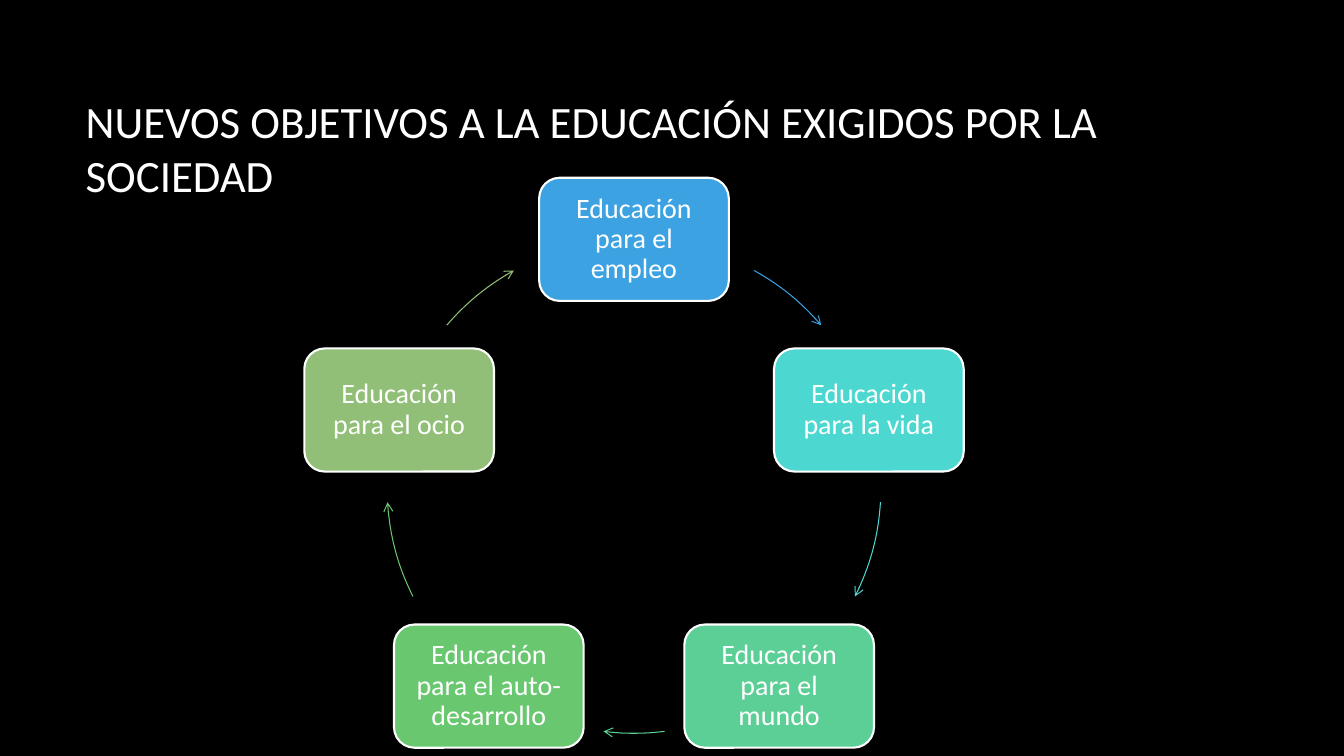
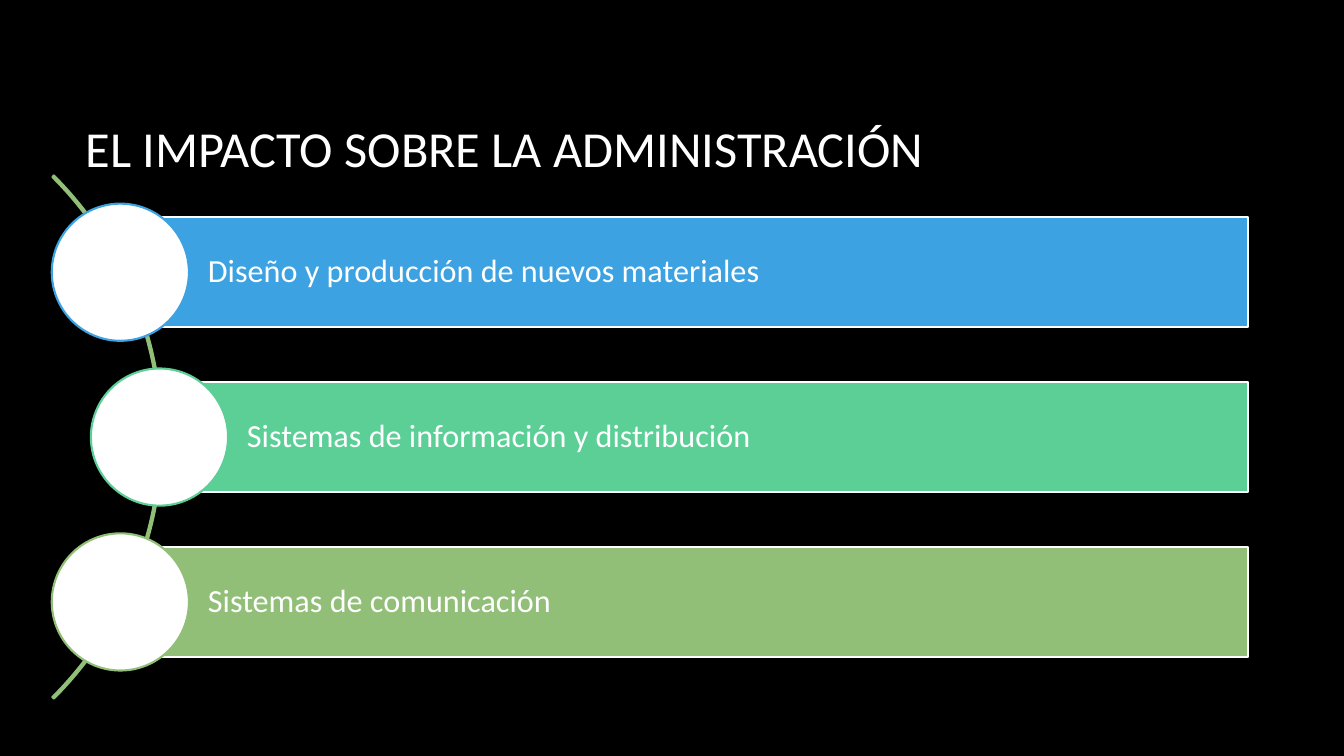
from math import cos, radians, sin, sqrt

from lxml.etree import SubElement
from pptx import Presentation
from pptx.dml.color import RGBColor as Rgb
from pptx.enum.shapes import MSO_SHAPE as Kind
from pptx.enum.text import MSO_ANCHOR as Anchor, MSO_AUTO_SIZE as Auto, PP_ALIGN as Align
from pptx.oxml.ns import qn
from pptx.util import Pt

HUES = {
    "black": "000000",
    "white": "FFFFFF",
    "blue": "3CA2E2",
    "cyan": "4CD8D1",
    "mint": "5BCF96",
    "green": "69C770",
    "olive": "91BF77",
}
FONT = "Calibri"


def hue(name):
    return Rgb.from_string(HUES[name])


def write(shape, text, size=20, align=Align.LEFT, pads=(7.2, 3.6, 7.2, 3.6), space=1.0):
    frame = shape.text_frame
    frame.word_wrap = True
    frame.auto_size = Auto.NONE
    frame.vertical_anchor = Anchor.MIDDLE
    frame.margin_left, frame.margin_top, frame.margin_right, frame.margin_bottom = map(Pt, pads)
    frame.text = text
    para = frame.paragraphs[0]
    para.alignment = align
    para.line_spacing = space
    para.font.name = FONT
    para.font.size = Pt(size)
    para.font.color.rgb = hue("white")


def block(slide, kind, box, fill, line, width=1.5):
    shape = slide.shapes.add_shape(kind, *map(Pt, box))
    shape.shadow.inherit = False
    if fill:
        shape.fill.solid()
        shape.fill.fore_color.rgb = hue(fill)
    else:
        shape.fill.background()
    shape.line.color.rgb = hue(line)
    shape.line.width = Pt(width)
    return shape


def ring(slide, kind, hub, radius, turns, color, width):
    box = hub[0] - radius, hub[1] - radius, radius * 2, radius * 2
    curve = block(slide, kind, box, None, color, width)
    for i, turn in enumerate(turns):
        curve.adjustments[i] = (turn - 90) % 360 * 0.6
    return curve


def start_slide(deck, title, size):
    slide = deck.slides.add_slide(deck.slide_layouts[5])
    head = slide.shapes.title
    head.left, head.top, head.width, head.height = map(Pt, (54, 48, 798, 114.5))
    write(head, title, size=size)
    return slide


def cycle(slide, box, items):
    left, top, side = box
    radius = side / 2
    hub = left + radius, top + radius
    wide, high = 135.5, 88
    spans = [(29.1, 49.3), (93.7, 116.5), (172.9, 187.1), (243.5, 266.3), (310.7, 330.9)]
    for i, ((text, color), span) in enumerate(zip(items, spans)):
        turn = radians(360 / len(items) * i)
        x, y = hub[0] + radius * sin(turn), hub[1] - radius * cos(turn)
        place = x - wide / 2, y - high / 2, wide, high
        node = block(slide, Kind.ROUNDED_RECTANGLE, place, color, "white")
        write(node, text, align=Align.CENTER, pads=(5.8,) * 4, space=0.9)
        curve = ring(slide, Kind.ARC, hub, radius, span, color, 0.75)
        SubElement(curve.line._get_or_add_ln(), qn("a:tailEnd"), type="arrow")


def curved_list(slide, box, items):
    left, top, wide, high = box
    mid = top + high / 2
    hub = left - 186.3, mid
    pitch, bar, disc, reach = 117.75, 78.5, 98, 262.2
    curve = ring(slide, Kind.BLOCK_ARC, hub, 264.2, (45, 135), "olive", 1.5)
    curve.adjustments[2] = 0.003
    for i, (text, color) in enumerate(items):
        shift = (i - (len(items) - 1) / 2) * pitch
        x = hub[0] + sqrt(reach ** 2 - shift ** 2)
        y = mid + shift
        place = x, y - bar / 2, left + wide - x, bar
        strip = block(slide, Kind.RECTANGLE, place, color, "white")
        write(strip, text, size=23, pads=(62.5, 4.5, 4.5, 4.5), space=0.9)
        block(slide, Kind.OVAL, (x - disc / 2, y - disc / 2, disc, disc), "white", color)


def main():
    deck = Presentation()
    deck.slide_width, deck.slide_height = Pt(960), Pt(540)
    back = deck.slide_master.background.fill
    back.solid()
    back.fore_color.rgb = hue("black")

    goals = start_slide(deck, "NUEVOS OBJETIVOS A LA EDUCACIÓN EXIGIDOS POR LA SOCIEDAD", 32)
    cycle(goals, (276.5, 171, 352.8), [
        ("Educación para el empleo", "blue"),
        ("Educación para la vida", "cyan"),
        ("Educación para el mundo", "mint"),
        ("Educación para el auto-desarrollo", "green"),
        ("Educación para el ocio", "olive"),
    ])

    impact = start_slide(deck, "EL IMPACTO SOBRE LA ADMINISTRACIÓN", 36)
    curved_list(impact, (38, 125.2, 853.5, 374), [
        ("Diseño y producción de nuevos materiales", "blue"),
        ("Sistemas de información y distribución", "mint"),
        ("Sistemas de comunicación", "olive"),
    ])
    deck.save("out.pptx")


if __name__ == "__main__":
    main()
